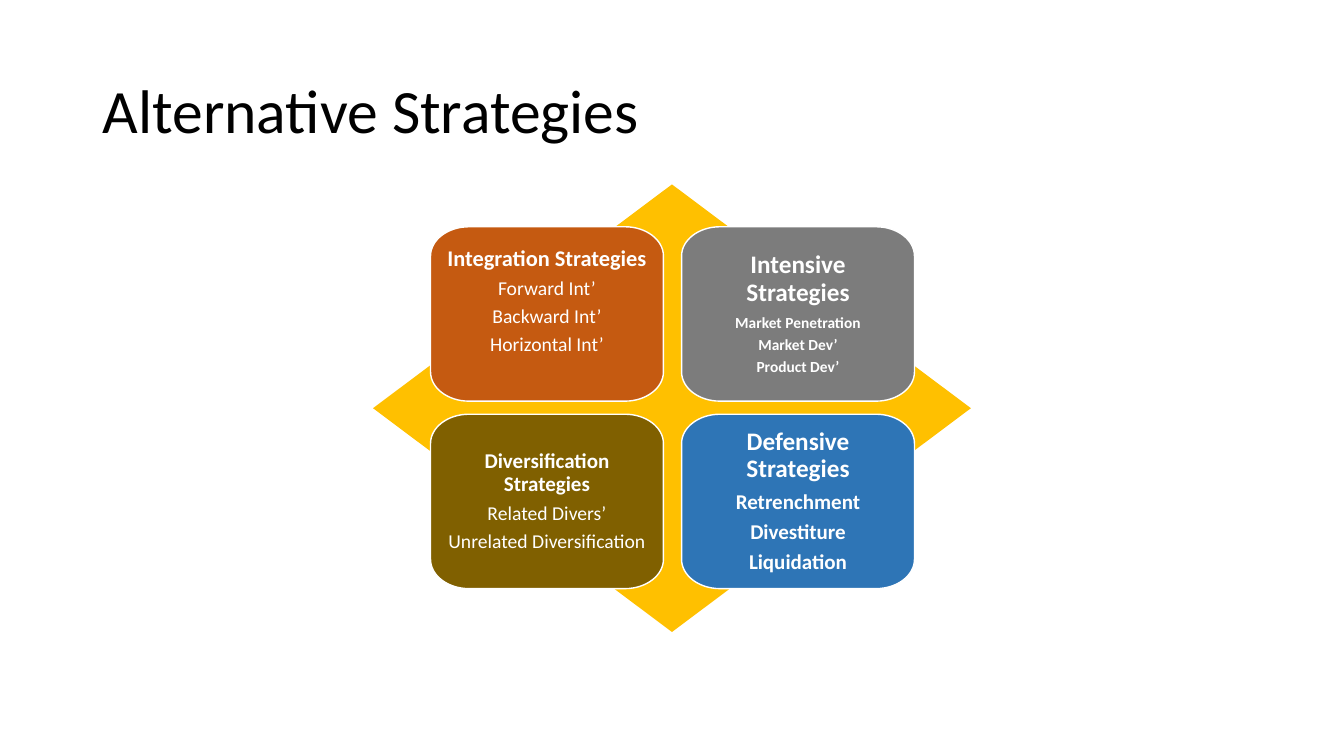
"""Build the Alternative Strategies slide."""
from pptx import Presentation
from pptx.dml.color import RGBColor
from pptx.enum import shapes as es, text as et
from pptx.oxml import ns
from pptx.util import Inches, Pt

TITLE = "Alternative Strategies"
CARDS = [
    dict(fill="C55A11", head="Integration Strategies", size=16,
         items=["Forward Int’", "Backward Int’", "Horizontal Int’"],
         small=14, bold=False, inset=0.15, foot=0.4),
    dict(fill="7C7C7C", head="Intensive Strategies", size=18,
         items=["Market Penetration", "Market Dev’", "Product Dev’"],
         small=11, bold=True, inset=0.16, foot=0.16),
    dict(fill="806000", head="Diversification Strategies", size=15,
         items=["Related Divers’", "Unrelated Diversification"],
         small=14, bold=False, inset=0.15, foot=0.15),
    dict(fill="2E75B6", head="Defensive Strategies", size=18,
         items=["Retrenchment", "Divestiture", "Liquidation"],
         small=15, bold=True, inset=0.16, foot=0.16),
]
LEFT, TOP, WIDE, HIGH = 4.27, 2.25, 2.31, 1.73
STEP_X, STEP_Y = 2.49, 1.86
RAD_X, RAD_Y = 0.38, 0.29
CURVE = 0.55


def assign(obj, **vals):
    for name, val in vals.items():
        setattr(obj, name, val)


def color(code):
    return RGBColor.from_string(code)


def paint(shape, code):
    shape.shadow.inherit = False
    shape.fill.solid()
    shape.fill.fore_color.rgb = color(code)


def write(para, words, size, code, align, bold=False, after=0):
    para.text = words
    assign(para, alignment=align, line_spacing=0.9,
           space_before=Pt(0), space_after=Pt(after))
    font = para.runs[0].font
    assign(font, name="Calibri", size=Pt(size), bold=bold)
    font.color.rgb = color(code)


def outline(x, y):
    """Give start, two handles and end of each corner, clockwise."""
    pts = []
    for dx, dy in [(-1, -1), (1, -1), (1, 1), (-1, 1)]:
        arc = [(0, 1), (0, 1 - CURVE), (1 - CURVE, 0), (1, 0)]
        for u, v in arc if dx == dy else arc[::-1]:
            pts.append((Inches(x + WIDE / 2 + dx * (WIDE / 2 - u * RAD_X)),
                        Inches(y + HIGH / 2 + dy * (HIGH / 2 - v * RAD_Y))))
    return pts


def bend(shape):
    """Turn the three lines at each corner into one curve."""
    lines = list(shape.element.iter(ns.qn("a:lnTo")))
    for i in range(0, 16, 4):
        first, *rest = lines[i:i + 3]
        curve = first.makeelement(ns.qn("a:cubicBezTo"), {})
        first.addprevious(curve)
        for line in [first, *rest]:
            curve.append(line[0])
            line.getparent().remove(line)


def add_card(slide, card, x, y):
    pts = outline(x, y)
    form = slide.shapes.build_freeform(*pts[0])
    form.add_line_segments(pts[1:], close=True)
    shape = form.convert_to_shape()
    bend(shape)
    paint(shape, card["fill"])
    shape.line.color.rgb = color("FFFFFF")
    shape.line.width = Pt(1)
    frame = shape.text_frame
    pad = Inches(card["inset"])
    assign(frame, word_wrap=True, vertical_anchor=et.MSO_ANCHOR.MIDDLE,
           margin_left=pad, margin_right=pad, margin_top=pad,
           margin_bottom=Inches(card["foot"]))
    rows = [(card["head"], card["size"], True)]
    rows += [(item, card["small"], card["bold"]) for item in card["items"]]
    for i, (words, size, bold) in enumerate(rows):
        para = frame.add_paragraph() if i else frame.paragraphs[0]
        write(para, words, size, "FFFFFF", et.PP_ALIGN.CENTER, bold,
              0.35 * size if i < len(rows) - 1 else 0)


def main():
    deck = Presentation()
    assign(deck, slide_width=Inches(13.33), slide_height=Inches(7.5))
    slide = deck.slides.add_slide(deck.slide_layouts[5])
    title = slide.shapes.title
    assign(title, left=Inches(0.92), top=Inches(0.4),
           width=Inches(11.5), height=Inches(1.45))
    title.text_frame.vertical_anchor = et.MSO_ANCHOR.MIDDLE
    write(title.text_frame.paragraphs[0], TITLE, 44, "000000", et.PP_ALIGN.LEFT)

    diamond = slide.shapes.add_shape(
        es.MSO_SHAPE.DIAMOND, Inches(3.7), Inches(1.83), Inches(5.93), Inches(4.44))
    paint(diamond, "FFC000")
    diamond.line.fill.background()
    for i, card in enumerate(CARDS):
        row, col = divmod(i, 2)
        add_card(slide, card, LEFT + col * STEP_X, TOP + row * STEP_Y)
    deck.save("out.pptx")


if __name__ == "__main__":
    main()
